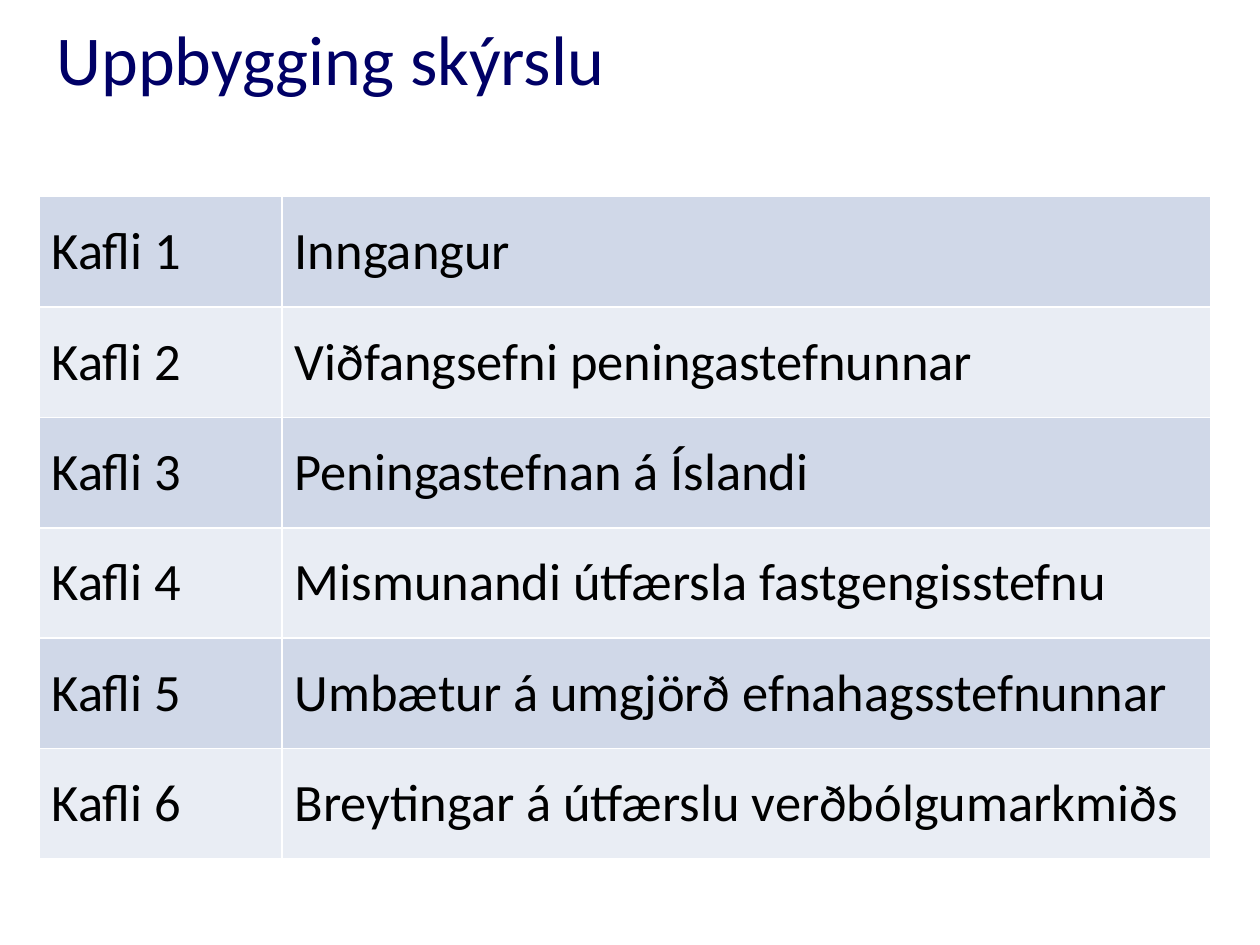
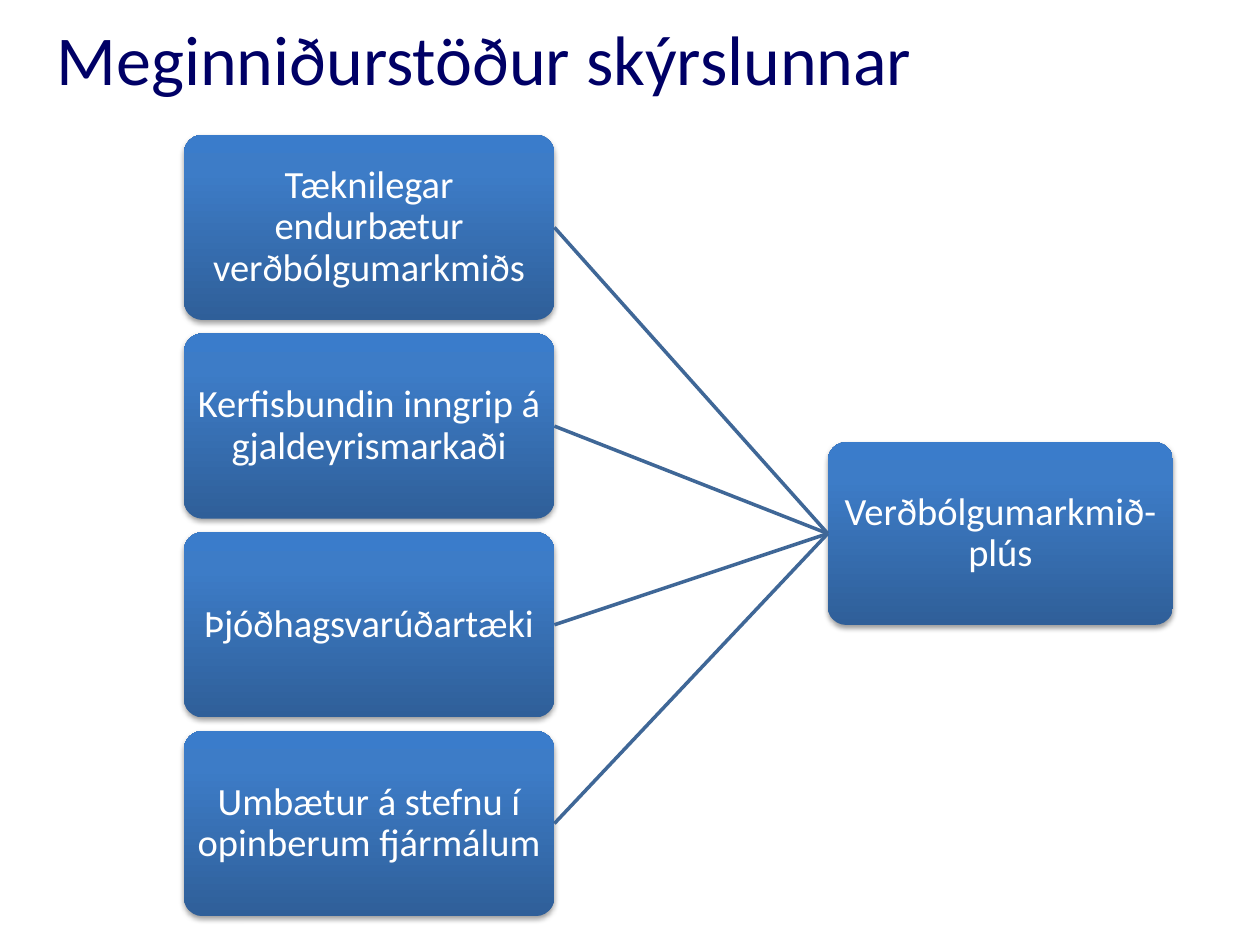
from dataclasses import dataclass

import pptx
import pptx.chart.data
import pptx.dml.color
import pptx.enum.shapes
import pptx.enum.text
import pptx.oxml
import pptx.oxml.ns
import pptx.util
from pptx.util import Inches

# Shared style
FONT = "Calibri"
NAVY, BLACK, WHITE, LINE = "000066", "000000", "FFFFFF", "3F6797"
BANDS = ("D0D8E8", "E9EDF4")
GRADIENT = ((0, "2F5F99"), (80, "3D7CC7"), (100, "3A7CCB"))
ANCHOR = pptx.enum.text.MSO_ANCHOR
NS = pptx.oxml.ns.nsdecls("a")

CHAPTERS = (
    "Inngangur",
    "Viðfangsefni peningastefnunnar",
    "Peningastefnan á Íslandi",
    "Mismunandi útfærsla fastgengisstefnu",
    "Umbætur á umgjörð efnahagsstefnunnar",
    "Breytingar á útfærslu verðbólgumarkmiðs",
)
MEASURES = (
    "Tæknilegar endurbætur verðbólgumarkmiðs",
    "Kerfisbundin inngrip á gjaldeyrismarkaði",
    "Þjóðhagsvarúðartæki",
    "Umbætur á stefnu í opinberum fjármálum",
)


@dataclass
class Box:
    text: str
    left: float
    top: float
    width: float
    height: float


def rgb(color: str) -> pptx.dml.color.RGBColor:
    return pptx.dml.color.RGBColor.from_string(color)


def add_run(p, text: str, size: float, color: str) -> None:
    r = p.add_run()
    r.text = text
    r.font.name = FONT
    r.font.size = pptx.util.Pt(size)
    r.font.color.rgb = rgb(color)


def add_slide(prs, title: str):
    s = prs.slides.add_slide(prs.slide_layouts[5])
    sp = s.shapes.title
    sp.left, sp.top = Inches(0.35), Inches(0.07)
    sp.width, sp.height = Inches(8.66), Inches(1.32)
    tf = sp.text_frame
    tf.auto_size = pptx.enum.text.MSO_AUTO_SIZE.NONE
    tf.vertical_anchor = ANCHOR.TOP
    p = tf.paragraphs[0]
    p.alignment = pptx.enum.text.PP_ALIGN.LEFT
    add_run(p, title, 40, NAVY)
    return s


def fill_cell(cell, text: str, color: str) -> None:
    tc_pr = cell._tc.get_or_add_tcPr()
    for side in ("lnL", "lnR", "lnT", "lnB"):
        tc_pr.append(pptx.oxml.parse_xml(
            f'<a:{side} {NS} w="12700"><a:solidFill><a:srgbClr val="{WHITE}"/>'
            f'</a:solidFill></a:{side}>'))
    cell.fill.solid()
    cell.fill.fore_color.rgb = rgb(color)
    cell.vertical_anchor = ANCHOR.MIDDLE
    add_run(cell.text_frame.paragraphs[0], text, 30, BLACK)


def add_box(s, box: Box):
    sp = s.shapes.add_shape(
        pptx.enum.shapes.MSO_SHAPE.ROUNDED_RECTANGLE,
        Inches(box.left), Inches(box.top), Inches(box.width), Inches(box.height))
    sp.adjustments[0] = 0.1
    sp.line.fill.background()

    # Vertical gradient and soft shadow, in schema order around the line
    stops = "".join(f'<a:gs pos="{pos * 1000}"><a:srgbClr val="{color}"/></a:gs>'
                    for pos, color in GRADIENT)
    sp.line._ln.addprevious(pptx.oxml.parse_xml(
        f'<a:gradFill {NS} rotWithShape="1"><a:gsLst>{stops}</a:gsLst>'
        f'<a:lin ang="16200000" scaled="0"/></a:gradFill>'))
    sp.line._ln.addnext(pptx.oxml.parse_xml(
        f'<a:effectLst {NS}><a:outerShdw blurRad="40000" dist="20000" dir="5400000" '
        f'rotWithShape="0"><a:srgbClr val="{BLACK}"><a:alpha val="38000"/></a:srgbClr>'
        f'</a:outerShdw></a:effectLst>'))

    tf = sp.text_frame
    tf.word_wrap = True
    tf.vertical_anchor = ANCHOR.MIDDLE
    tf.margin_left = tf.margin_right = tf.margin_top = tf.margin_bottom = Inches(0.06)
    p = tf.paragraphs[0]
    p.alignment = pptx.enum.text.PP_ALIGN.CENTER
    p.line_spacing = 0.9
    add_run(p, box.text, 22, WHITE)
    return sp


def join(s, start, end) -> None:
    line = s.shapes.add_connector(pptx.enum.shapes.MSO_CONNECTOR.STRAIGHT, 0, 0, 0, 0)
    line.begin_connect(start, 3)
    line.end_connect(end, 1)
    line.line.color.rgb = rgb(LINE)
    line.line.width = pptx.util.Pt(2)
    line._element.spPr.append(pptx.oxml.parse_xml(f"<a:effectLst {NS}/>"))


def build_structure(prs) -> None:
    s = add_slide(prs, "Uppbygging skýrslu")
    table = s.shapes.add_table(len(CHAPTERS), 2, Inches(0.31), Inches(1.56),
                               Inches(9.3), Inches(5.26)).table
    table.first_row = table.horz_banding = False
    table.columns[0].width, table.columns[1].width = Inches(1.93), Inches(7.37)
    for i, chapter in enumerate(CHAPTERS):
        for j, text in enumerate((f"Kafli {i + 1}", chapter)):
            fill_cell(table.cell(i, j), text, BANDS[i % 2])


def build_findings(prs) -> None:
    s = add_slide(prs, "Meginniðurstöður skýrslunnar")
    result = add_box(s, Box("Verðbólgumarkmið-plús", 6.57, 3.51, 2.74, 1.45))
    for i, text in enumerate(MEASURES):
        measure = add_box(s, Box(text, 1.46, 1.07 + 1.577 * i, 2.94, 1.47))
        join(s, measure, result)


def main() -> None:
    prs = pptx.Presentation()
    prs.slide_width, prs.slide_height = Inches(10), Inches(7.5)
    build_structure(prs)
    build_findings(prs)
    prs.save("out.pptx")


if __name__ == "__main__":
    main()
